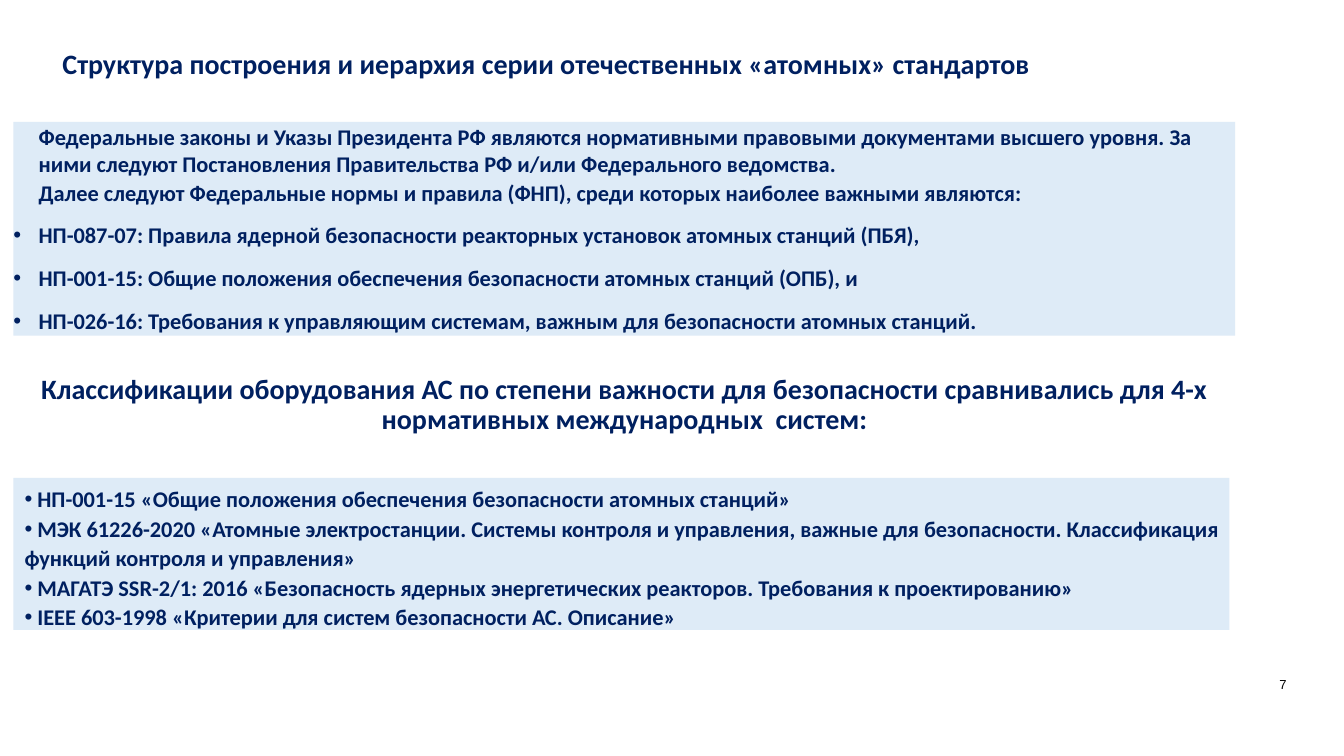
import pptx
import pptx.util
import pptx.dml.color
import pptx.enum.text
import lxml.etree
from pptx.oxml.ns import qn

COLORS = {"navy": "002060", "panel": "DEEBF7", "black": "000000"}
ALIGN = pptx.enum.text.PP_ALIGN
ANCHOR = pptx.enum.text.MSO_ANCHOR

prs = pptx.Presentation()
prs.slide_width = pptx.util.Inches(13.33)
prs.slide_height = pptx.util.Inches(7.5)
# Grid of 100 columns by 100 rows
COL, ROW = prs.slide_width / 100, prs.slide_height / 100
s = prs.slides.add_slide(prs.slide_layouts.get_by_name("Two Content"))


def place(sp, left, top, width, height, anchor=ANCHOR.TOP, fill=None):
    """Put a shape on the grid and return its text frame without insets."""
    sp.left, sp.width = int(left * COL), int(width * COL)
    sp.top, sp.height = int(top * ROW), int(height * ROW)
    if fill:
        sp.fill.solid()
        sp.fill.fore_color.rgb = pptx.dml.color.RGBColor.from_string(COLORS[fill])
    tf = sp.text_frame
    tf.word_wrap = True
    tf.auto_size = pptx.enum.text.MSO_AUTO_SIZE.NONE
    tf.vertical_anchor = anchor
    tf.margin_left = tf.margin_top = tf.margin_right = tf.margin_bottom = 0
    return tf


def write(tf, text, size, align=ALIGN.LEFT, spacing=0.9, before=0, bullet=False,
          margin=0, indent=0, font="Calibri", color="navy", bold=True):
    """Fill the first empty paragraph, or add one, with a single run."""
    p = tf.add_paragraph() if tf.text else tf.paragraphs[0]
    p.alignment = align
    p.line_spacing = spacing
    p.space_before = pptx.util.Pt(before)
    pPr = p._p.get_or_add_pPr()
    pPr.set("marL", str(pptx.util.Inches(margin)))
    pPr.set("indent", str(pptx.util.Inches(indent)))
    if bullet:
        lxml.etree.SubElement(pPr, qn("a:buChar")).set("char", "•")
    else:
        lxml.etree.SubElement(pPr, qn("a:buNone"))
    r = p.add_run()
    r.text = text
    r.font.name, r.font.size, r.font.bold = font, pptx.util.Pt(size), bold
    r.font.color.rgb = pptx.dml.color.RGBColor.from_string(COLORS[color])


title, standards, systems = s.placeholders

# Title
tf = place(title, 4.65, 6.67, 78, 4.4)
write(tf, "Структура построения и иерархия серии отечественных «атомных» стандартов", 20)

# Hierarchy of national standards
tf = place(standards, 1, 16.13, 90.9, 28.27, ANCHOR.MIDDLE, "panel")
intro = [
    "Федеральные законы и Указы Президента РФ являются нормативными правовыми "
    "документами высшего уровня. За ними следуют Постановления Правительства РФ "
    "и/или Федерального ведомства.",
    "Далее следуют Федеральные нормы и правила (ФНП), среди которых наиболее "
    "важными являются:",
]
for i, text in enumerate(intro):
    write(tf, text, 16, spacing=1.0, before=1.3 if i else 0, margin=0.25)
rules = [
    "НП-087-07: Правила ядерной безопасности реакторных установок атомных станций (ПБЯ),",
    "НП-001-15: Общие положения обеспечения безопасности атомных станций (ОПБ), и",
    "НП-026-16: Требования к управляющим системам, важным для безопасности атомных станций.",
]
for text in rules:
    write(tf, text, 16, before=13.3, bullet=True, margin=0.25, indent=-0.25)

# Heading of the classification part
tf = place(s.shapes.add_textbox(0, 0, 0, 0), 0, 49.6, 92.94, 9.2)
write(tf, "Классификации оборудования АС по степени важности для безопасности "
          "сравнивались для 4-х нормативных международных  систем:", 20, ALIGN.CENTER)

# Compared systems of norms
tf = place(systems, 1, 63.2, 90.47, 20.13, fill="panel")
tf.margin_top = pptx.util.Inches(0.05)
norms = [
    "НП-001-15 «Общие положения обеспечения безопасности атомных станций»",
    "МЭК 61226-2020 «Атомные электростанции. Системы контроля и управления, важные "
    "для безопасности. Классификация функций контроля и управления»",
    "МАГАТЭ SSR-2/1: 2016 «Безопасность ядерных энергетических реакторов. "
    "Требования к проектированию»",
    "IEEE 603-1998 «Критерии для систем безопасности АС. Описание»",
]
for text in norms:
    write(tf, " " + text, 16, spacing=1.1, bullet=True, margin=0.11)

# Slide number
tf = place(s.shapes.add_textbox(0, 0, 0, 0), 89.57, 88.93, 6.15, 2.67, ANCHOR.BOTTOM)
write(tf, "7", 9.3, ALIGN.RIGHT, spacing=1.0, font="Arial", color="black", bold=False)

prs.save("out.pptx")
